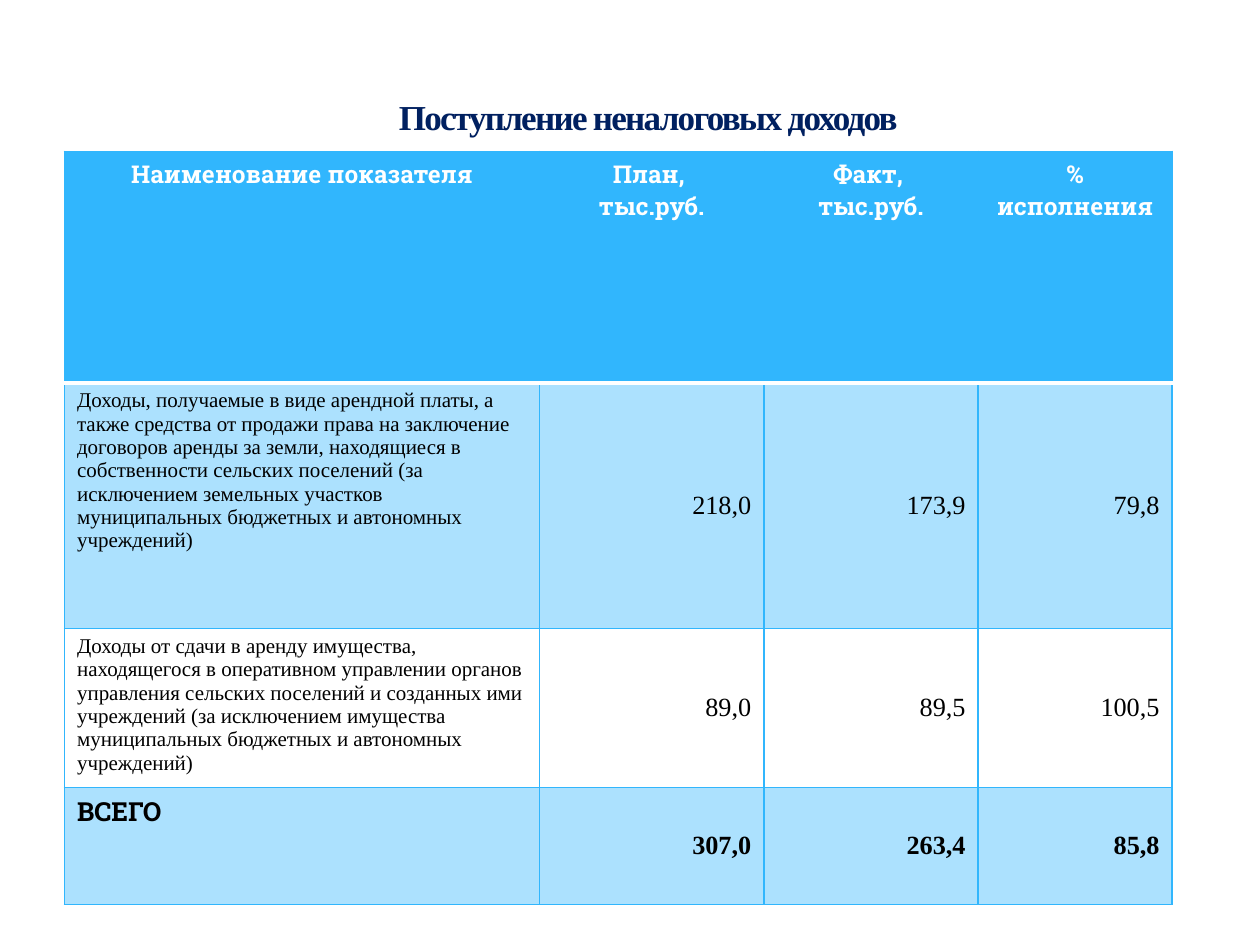
from pptx import Presentation
from pptx.dml.color import RGBColor as Rgb
from pptx.enum.text import MSO_ANCHOR as Anc, PP_ALIGN as Al
from pptx.oxml.ns import qn
from pptx.util import Cm, Pt
from lxml.etree import Element, SubElement as Sub

BLUE = Rgb(0x31, 0xB6, 0xFD)
NAVY = Rgb(0x00, 0x20, 0x60)
WHITE = Rgb(0xFF, 0xFF, 0xFF)
BLACK = Rgb(0x00, 0x00, 0x00)
SLAB, TIMES = "Roboto Slab", "Times New Roman"

COLS = [9.58, 4.52, 4.32, 3.91]
ROWS = [4.67, 4.95, 3.2, 2.36]
HEAD = [["Наименование показателя"], ["План, ", "тыс.руб."],
        ["Факт, ", "тыс.руб."], ["% исполнения"]]
DATA = [
    ["Доходы, получаемые в виде арендной платы, а также средства от продажи "
     "права на заключение договоров аренды за земли, находящиеся в "
     "собственности сельских поселений (за исключением земельных участков "
     "муниципальных бюджетных и автономных учреждений)",
     "218,0", "173,9", "79,8"],
    ["Доходы от сдачи в аренду имущества, находящегося в оперативном "
     "управлении органов управления сельских поселений и созданных ими "
     "учреждений (за исключением имущества муниципальных бюджетных и "
     "автономных учреждений)",
     "89,0", "89,5", "100,5"],
    ["ВСЕГО", "307,0", "263,4", "85,8"],
]


def write(frame, lines, font, size, color, bold, align):
    """Write each line as a paragraph with one run."""
    for i, line in enumerate(lines):
        para = frame.paragraphs[0] if i == 0 else frame.add_paragraph()
        para.alignment = align
        run = para.add_run()
        run.text = line
        face = run.font
        face.name, face.size, face.bold = font, Pt(size), bold
        face.color.rgb = color


def edge(cell, sides):
    """Draw the cell's borders from a map of side to colour and width."""
    prop = cell._tc.get_or_add_tcPr()
    for i, side in enumerate("LRTB"):
        color, width = sides.get(side, (BLUE, 1))
        line = Element(qn("a:ln" + side), w=str(Pt(width)))
        Sub(Sub(line, qn("a:solidFill")), qn("a:srgbClr"), val=str(color))
        prop.insert(i, line)


def paint(cell, alpha=None):
    """Fill the cell with blue, see-through if alpha is given in percent."""
    cell.fill.solid()
    cell.fill.fore_color.rgb = BLUE
    if alpha:
        tone = cell._tc.tcPr.find(qn("a:solidFill")).find(qn("a:srgbClr"))
        Sub(tone, qn("a:alpha"), val=str(alpha * 1000))


def add_title(slide, left, top, width, height):
    """Place and format the title."""
    title = slide.shapes.title
    title.left, title.top = Cm(left), Cm(top)
    title.width, title.height = Cm(width), Cm(height)
    frame = title.text_frame
    frame.vertical_anchor = Anc.MIDDLE
    write(frame, ["Поступление неналоговых доходов"], TIMES, 20, NAVY, True,
          Al.CENTER)
    frame.paragraphs[0].runs[0].font._element.set("spc", "-100")


def add_grid(slide, left, top, width, height):
    """Place the income table."""
    grid = slide.shapes.add_table(len(ROWS), len(COLS), Cm(left), Cm(top),
                                  Cm(width), Cm(height)).table
    grid.first_row = grid.horz_banding = False
    for col, size in zip(grid.columns, COLS):
        col.width = Cm(size)
    for row, size in zip(grid.rows, ROWS):
        row.height = Cm(size)

    for c, lines in enumerate(HEAD):
        cell = grid.cell(0, c)
        write(cell.text_frame, lines, SLAB, 14, WHITE, True, Al.CENTER)
        paint(cell)
        edge(cell, {"B": (WHITE, 3)})

    for r, texts in enumerate(DATA, 1):
        total = r == len(DATA)
        for c, text in enumerate(texts):
            cell = grid.cell(r, c)
            font = SLAB if total and c == 0 else TIMES
            size = 15 if total or c else 12
            write(cell.text_frame, [text], font, size, BLACK, total,
                  Al.RIGHT if c else Al.LEFT)
            cell.vertical_anchor = Anc.MIDDLE if c else Anc.TOP
            if r % 2:
                paint(cell, 40)
            else:
                cell.fill.background()
            edge(cell, {"T": (WHITE, 3)} if r == 1 else {})


def main():
    """Build the slide and save it."""
    deck = Presentation()
    deck.slide_width, deck.slide_height = Cm(25.4), Cm(19.05)
    slide = deck.slides.add_slide(deck.slide_layouts[5])
    add_grid(slide, 1.3, 3.05, sum(COLS), sum(ROWS))
    add_title(slide, 3.5, 1.73, 19.13, 1.24)
    deck.save("out.pptx")


if __name__ == "__main__":
    main()
